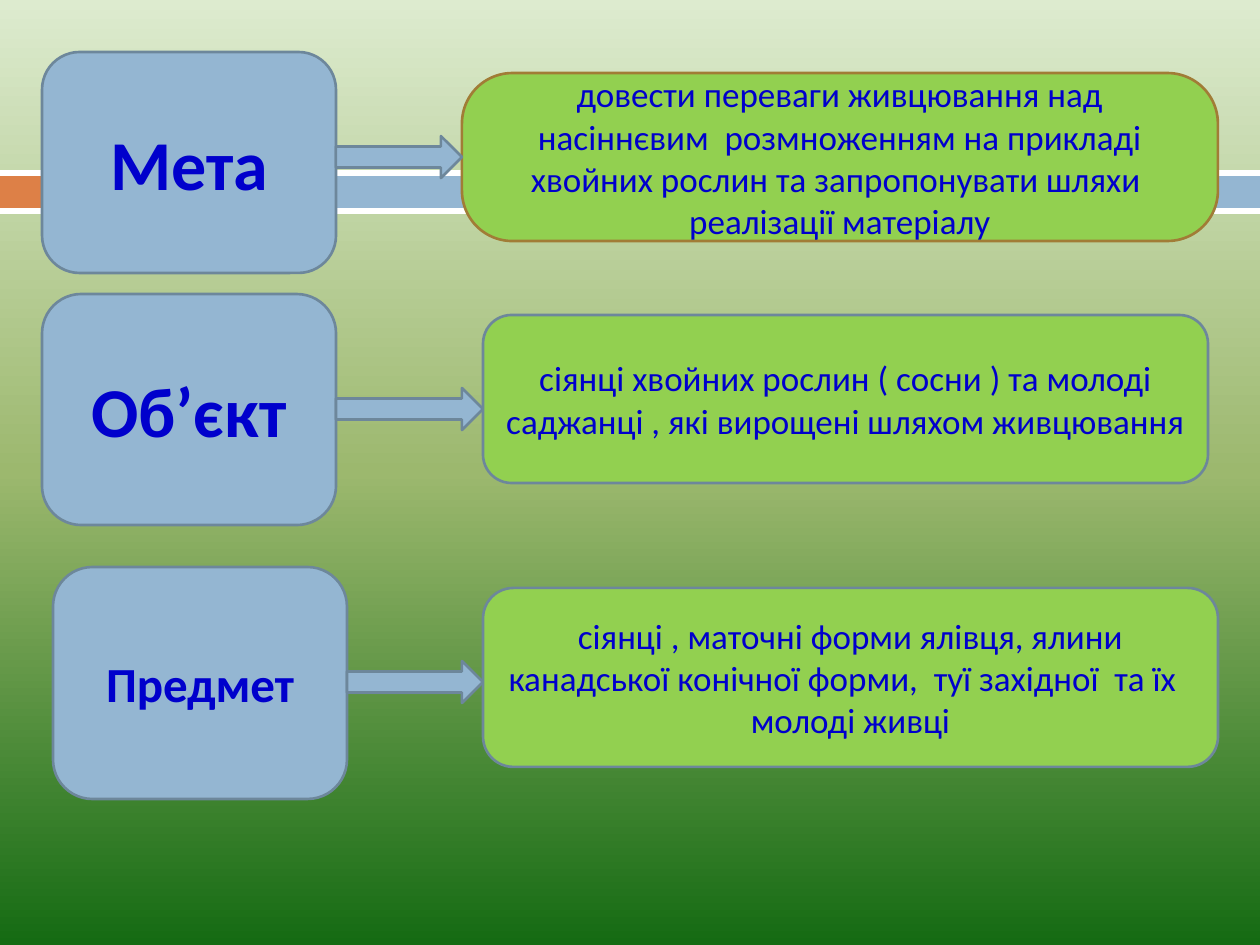
from copy import deepcopy

from pptx import Presentation
from pptx.dml.color import RGBColor
from pptx.enum.shapes import MSO_SHAPE as Preset
from pptx.enum.text import MSO_ANCHOR as Anchor, PP_ALIGN as Align
from pptx.oxml.ns import qn
from pptx.util import Pt

EMU_PER_PX = 914400 / 126
SLIDE_WIDTH, SLIDE_HEIGHT = 1260, 945
ARROW_HEIGHT = 42

WHITE = RGBColor(0xFF, 0xFF, 0xFF)
ORANGE = RGBColor(0xDD, 0x80, 0x47)
BLUE = RGBColor(0x94, 0xB6, 0xD2)
GREEN = RGBColor(0x92, 0xD0, 0x50)
SLATE = RGBColor(0x6D, 0x87, 0x9B)
BROWN = RGBColor(0xA1, 0x7C, 0x36)
INK = RGBColor(0x00, 0x00, 0xCC)
GRADIENT = [
    (0, RGBColor(0xDD, 0xEB, 0xCF)),
    (0.5, RGBColor(0x9C, 0xB8, 0x6E)),
    (1, RGBColor(0x15, 0x6B, 0x13)),
]

BANDS = [
    ((0, 170, SLIDE_WIDTH, 44), WHITE),
    ((0, 176, 73, 32), ORANGE),
    ((82, 176, 1178, 32), BLUE),
]

ROWS = [
    {
        "term": "Мета", "term_size": 40, "term_box": (42, 52, 294, 221),
        "text": "довести переваги живцювання над насіннєвим  розмноженням на прикладі "
                "хвойних рослин та запропонувати шляхи  реалізації матеріалу",
        "text_box": (462, 73, 756, 168), "outline": BROWN, "corner": 0.3,
        "arrow_top": 136,
    },
    {
        "term": "Об’єкт", "term_size": 40, "term_box": (42, 294, 294, 231),
        "text": "сіянці хвойних рослин ( сосни ) та молоді саджанці , "
                "які вирощені шляхом живцювання",
        "text_box": (483, 315, 725, 168), "outline": SLATE, "corner": 0.17,
        "arrow_top": 388,
    },
    {
        "term": "Предмет", "term_size": 28, "term_box": (53, 567, 294, 232),
        "text": "сіянці , маточні форми ялівця, ялини канадської конічної форми,  "
                "туї західної  та їх   молоді живці",
        "text_box": (483, 588, 735, 179), "outline": SLATE, "corner": 0.17,
        "arrow_top": 661,
    },
]


def px(length):
    return round(length * EMU_PER_PX)


def paint_background(slide):
    fill = slide.background.fill
    fill.gradient()
    fill.gradient_angle = 270
    stop_list = slide.element.find(".//" + qn("a:gsLst"))
    stop_list.append(deepcopy(stop_list[0]))
    for stop, (position, color) in zip(fill.gradient_stops, GRADIENT):
        stop.position = position
        stop.color.rgb = color


def add_block(slide, preset, box, color, outline=None):
    shape = slide.shapes.add_shape(preset, *map(px, box))
    shape.shadow.inherit = False
    shape.fill.solid()
    shape.fill.fore_color.rgb = color
    if outline is None:
        shape.line.fill.background()
    else:
        shape.line.color.rgb = outline
        shape.line.width = Pt(1.5)
    return shape


def add_card(slide, box, color, outline, corner, text, font_format):
    shape = add_block(slide, Preset.ROUNDED_RECTANGLE, box, color, outline)
    shape.adjustments[0] = corner
    frame = shape.text_frame
    frame.word_wrap = True
    frame.vertical_anchor = Anchor.MIDDLE
    paragraph = frame.paragraphs[0]
    paragraph.alignment = Align.CENTER
    run = paragraph.add_run()
    run.text = text
    run.font.color.rgb = INK
    for name, value in {"name": "Calibri", **font_format}.items():
        setattr(run.font, name, value)


def add_row(slide, row):
    add_card(slide, row["term_box"], BLUE, SLATE, 0.17, row["term"],
             {"size": Pt(row["term_size"]), "bold": True})
    add_card(slide, row["text_box"], GREEN, row["outline"], row["corner"],
             row["text"], {"size": Pt(20), "bold": False})
    left, _, width, _ = row["term_box"]
    start = left + width
    arrow_box = (start, row["arrow_top"], row["text_box"][0] - start, ARROW_HEIGHT)
    add_block(slide, Preset.RIGHT_ARROW, arrow_box, BLUE, SLATE)


def main():
    presentation = Presentation()
    presentation.slide_width = px(SLIDE_WIDTH)
    presentation.slide_height = px(SLIDE_HEIGHT)
    slide = presentation.slides.add_slide(presentation.slide_layouts[6])
    paint_background(slide)
    for box, color in BANDS:
        add_block(slide, Preset.RECTANGLE, box, color)
    for row in ROWS:
        add_row(slide, row)
    presentation.save("out.pptx")


if __name__ == "__main__":
    main()
